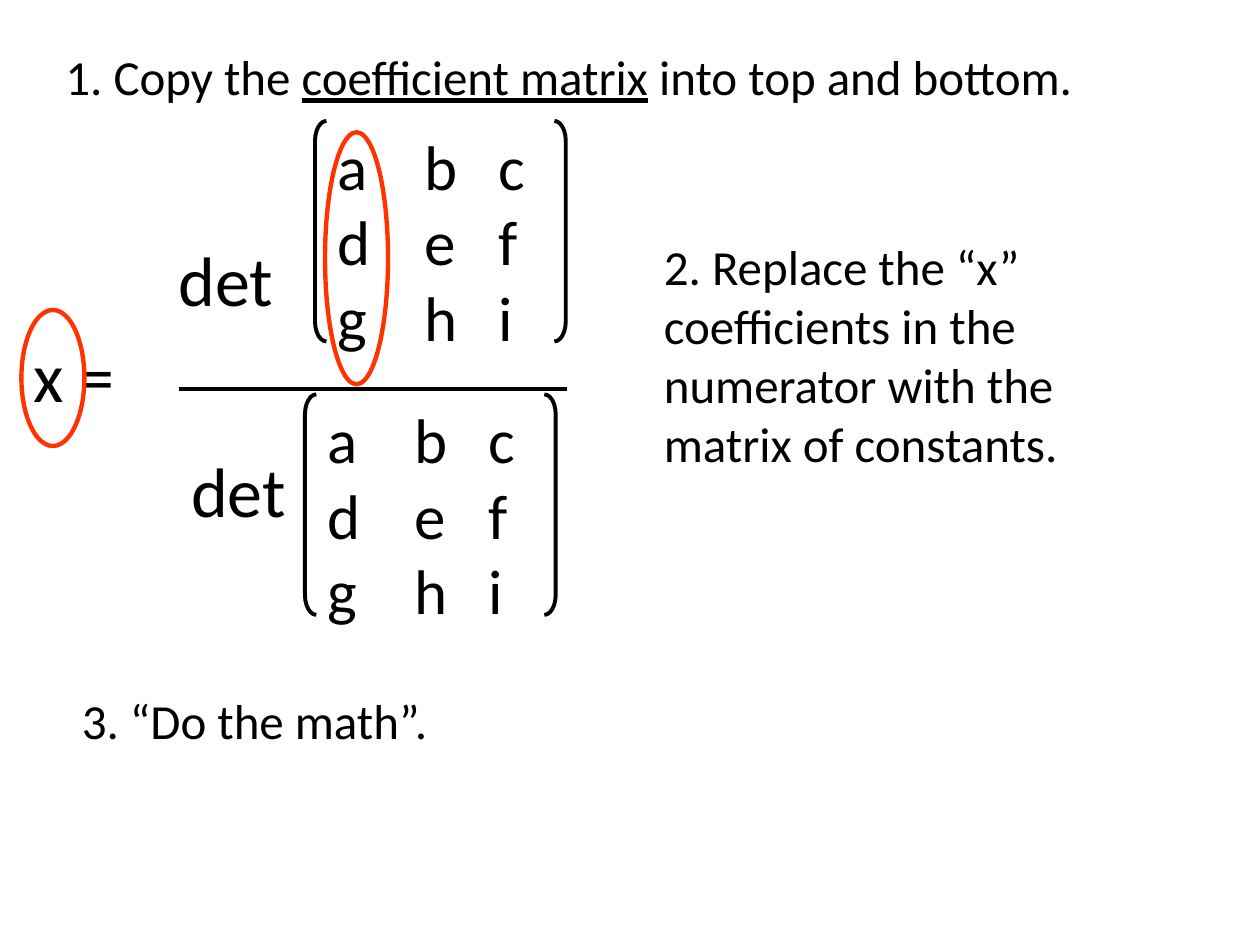
import pptx
import pptx.enum.shapes
import pptx.enum.text
import pptx.dml.color
import pptx.oxml
import pptx.oxml.ns
import pptx.util
from lxml import etree

Inches = pptx.util.Inches
SHAPE = pptx.enum.shapes.MSO_SHAPE
ALIGN = pptx.enum.text.PP_ALIGN
COLORS = {"ink": "000000", "mark": "FF3300"}
FONT = "Calibri"
MATRIX = ["a\tb\tc", "d\te\tf", "g\th\ti"]
TAB_STOPS = [0.69, 1.28]


def rgb(name):
    return pptx.dml.color.RGBColor.from_string(COLORS[name])


def add_text(shapes, box, paragraphs, size, wrap=False, align=None):
    """Each paragraph is a string or a list of (text, underline) runs."""
    tf = shapes.add_textbox(*map(Inches, box)).text_frame
    tf.word_wrap = wrap
    for i, runs in enumerate(paragraphs):
        p = tf.paragraphs[0] if i == 0 else tf.add_paragraph()
        p.alignment = align
        for text, underline in [(runs, None)] if isinstance(runs, str) else runs:
            r = p.add_run()
            r.text = text
            fmt = {"name": FONT, "size": pptx.util.Pt(size), "underline": underline}
            for key, value in fmt.items():
                setattr(r.font, key, value)
            r.font.color.rgb = rgb("ink")
    return tf


def add_outline(shapes, kind, box, color, width):
    sp = shapes.add_shape(kind, *map(Inches, box))
    sp.shadow.inherit = False
    sp.fill.background()
    sp.line.color.rgb = rgb(color)
    sp.line.width = pptx.util.Pt(width)
    return sp


def set_tabs(p):
    qn = pptx.oxml.ns.qn
    tabs = etree.SubElement(p._p.get_or_add_pPr(), qn("a:tabLst"))
    for stop in TAB_STOPS:
        etree.SubElement(tabs, qn("a:tab"), pos=str(Inches(stop)), algn="l")


def add_matrix(s, left, top):
    """Group of three tabbed rows between two brackets."""
    shapes = s.shapes.add_group_shape().shapes
    tf = add_text(shapes, (left + 0.08, top, 2.17, 1.95), MATRIX, 36, wrap=True)
    for p in tf.paragraphs:
        set_tabs(p)
    for kind, x in ((SHAPE.LEFT_BRACKET, left), (SHAPE.RIGHT_BRACKET, left + 1.9)):
        sp = add_outline(shapes, kind, (x, top, 0.09, 1.75), "ink", 2.25)
        sp.adjustments[0] = 1.75


def add_rule(s, x1, x2, y):
    line = s.shapes.add_connector(pptx.enum.shapes.MSO_CONNECTOR.STRAIGHT,
                                  Inches(x1), Inches(y), Inches(x2), Inches(y))
    line.line.color.rgb = rgb("ink")
    line.line.width = pptx.util.Pt(2.25)
    etree.SubElement(line._element.spPr, pptx.oxml.ns.qn("a:effectLst"))


def main():
    prs = pptx.Presentation()
    prs.slide_width, prs.slide_height = Inches(10), Inches(7.5)
    s = prs.slides.add_slide(prs.slide_layouts[6])

    # Fraction: x = det(numerator) / det(denominator)
    add_matrix(s, 2.5, 0.96)
    add_text(s.shapes, (0.17, 2.59, 0.98, 0.77), ["x ="], 40)
    for left, top in ((1.32, 1.83), (1.42, 3.5)):
        add_text(s.shapes, (left, top, 0.97, 0.77), ["det"], 40)
    add_rule(s, 1.42, 4.5, 3.09)
    add_matrix(s, 2.42, 3.13)

    # Steps
    add_text(s.shapes, (0.42, 0.32, 8.39, 0.57),
             [[("1. Copy the ", None), ("coefficient matrix", True),
               (" into top and bottom.", None)]], 28)
    add_text(s.shapes, (5.17, 1.83, 4.31, 1.99),
             ["2. Replace the “x”", "coefficients in the",
              "numerator with the", "matrix of constants."], 28, wrap=True)
    add_text(s.shapes, (0.52, 5.43, 3.0, 0.57), ["3. “Do the math”."], 28,
             align=ALIGN.CENTER)

    # Rings around x and its coefficients
    for box in ((0.17, 2.46, 0.5, 1.08), (2.58, 1.05, 0.5, 2)):
        add_outline(s.shapes, SHAPE.OVAL, box, "mark", 2.5)

    prs.save("out.pptx")


if __name__ == "__main__":
    main()
